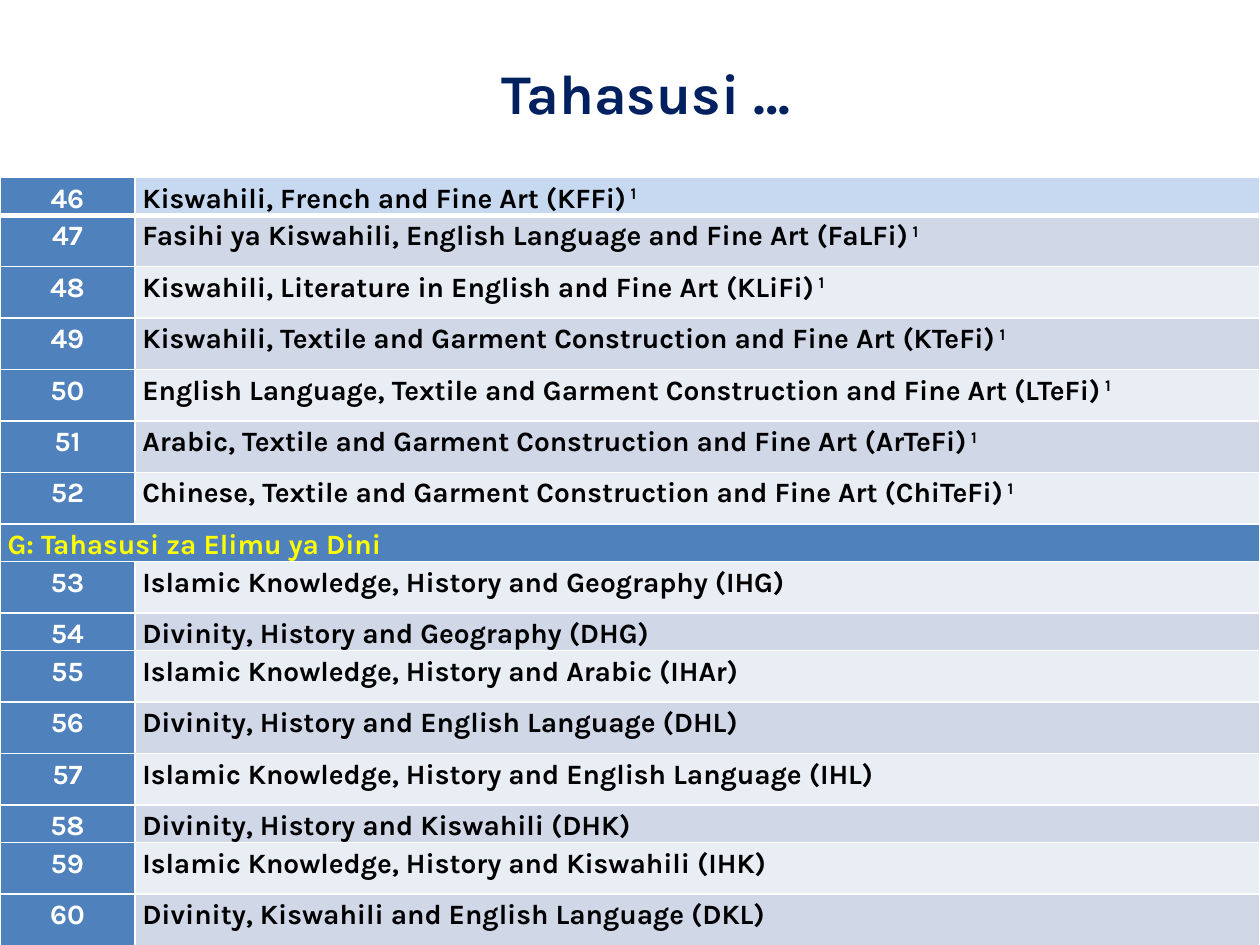
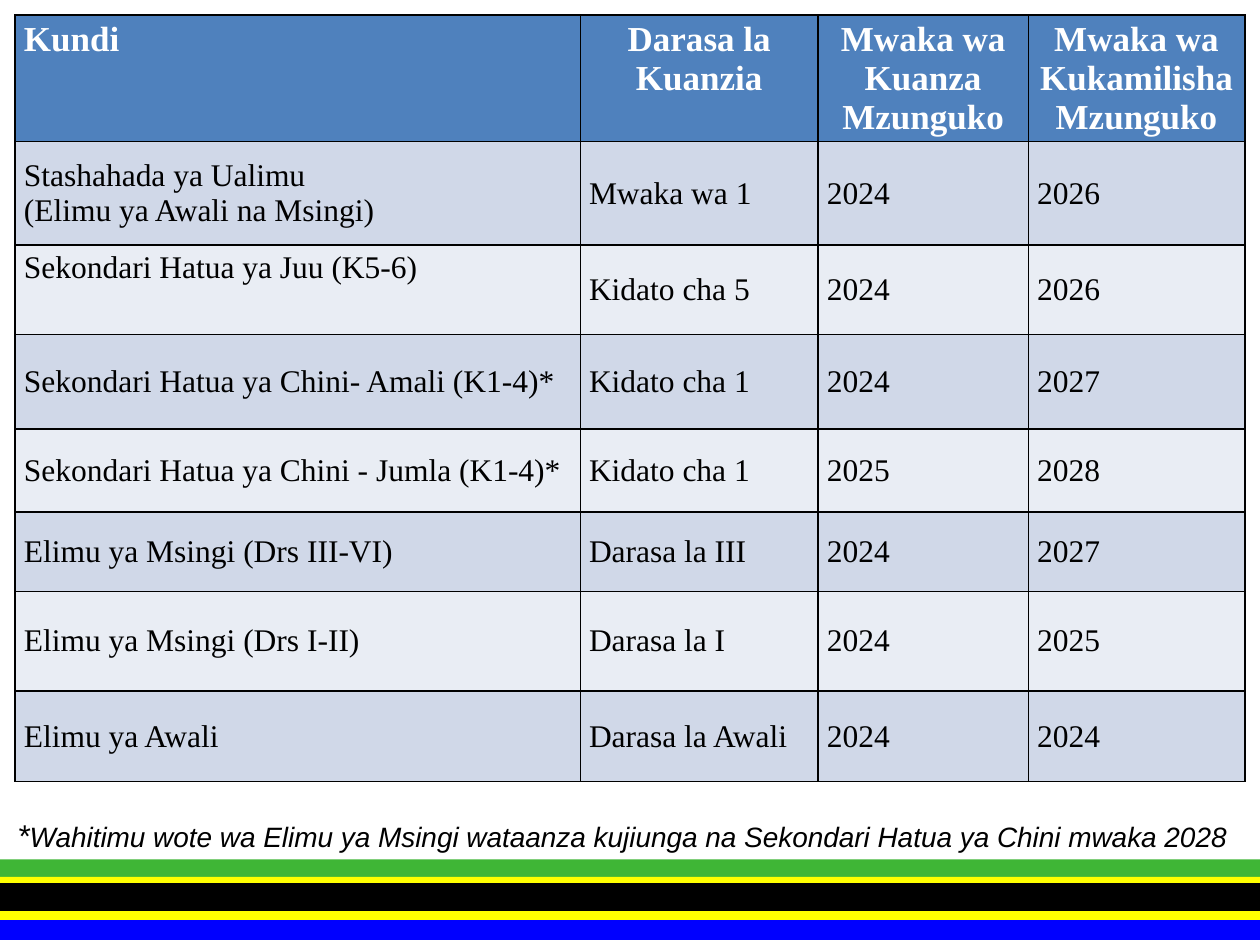
from lxml import etree
from pptx import Presentation
from pptx.dml.color import RGBColor
from pptx.enum.shapes import MSO_SHAPE
from pptx.enum.text import MSO_ANCHOR, PP_ALIGN
from pptx.oxml.ns import qn
from pptx.util import Inches, Pt

RECT = MSO_SHAPE.RECTANGLE
TOP, MIDDLE = MSO_ANCHOR.TOP, MSO_ANCHOR.MIDDLE
LEFT, CENTER, JUSTIFY = PP_ALIGN.LEFT, PP_ALIGN.CENTER, PP_ALIGN.JUSTIFY

WHITE = RGBColor(0xFF, 0xFF, 0xFF)
BLACK = RGBColor(0x00, 0x00, 0x00)
NAVY = RGBColor(0x00, 0x20, 0x60)
YELLOW = RGBColor(0xFF, 0xFF, 0x00)
GREEN = RGBColor(0x3F, 0xB6, 0x36)
FLAG_BLUE = RGBColor(0x00, 0x00, 0xFF)
HEAD_BLUE = RGBColor(0x4F, 0x81, 0xBD)
SKY = RGBColor(0xC6, 0xD9, 0xF1)
STRIPES = (RGBColor(0xE9, 0xED, 0xF4), RGBColor(0xD0, 0xD8, 0xE8))

WIDTH, HEIGHT = Inches(10), Inches(7.5)
COL, ROW = WIDTH / 100, HEIGHT / 75

TITLE = dict(name="Karla", size=Pt(32), bold=True, color=NAVY)
ENTRY = dict(name="Karla", size=Pt(16), bold=True, color=BLACK)
NUMBER = {**ENTRY, "color": WHITE}
SECTION = {**ENTRY, "color": YELLOW}
HEAD = dict(name="Times New Roman", size=Pt(20), bold=True, color=WHITE)
CELL = dict(name="Times New Roman", size=Pt(18), bold=False, color=BLACK)
STAR = dict(name="Arial", size=Pt(18), italic=True, color=BLACK)
NOTE = {**STAR, "size": Pt(16)}

ART_SUBJECTS = [
    "Kiswahili, French and Fine Art (KFFi)",
    "Fasihi ya Kiswahili, English Language and Fine Art (FaLFi)",
    "Kiswahili, Literature in English and Fine Art (KLiFi)",
    "Kiswahili, Textile and Garment Construction and Fine Art (KTeFi)",
    "English Language, Textile and Garment Construction and Fine Art (LTeFi)",
    "Arabic, Textile and Garment Construction and Fine Art (ArTeFi)",
    "Chinese, Textile and Garment Construction and Fine Art (ChiTeFi)",
]
RELIGION_HEADING = "G: Tahasusi za Elimu ya Dini"
RELIGION_SUBJECTS = [
    "Islamic Knowledge, History and Geography (IHG)",
    "Divinity, History and Geography (DHG)",
    "Islamic Knowledge, History and Arabic (IHAr)",
    "Divinity, History and English Language (DHL)",
    "Islamic Knowledge, History and English Language (IHL)",
    "Divinity, History and Kiswahili (DHK)",
    "Islamic Knowledge, History and Kiswahili (IHK)",
    "Divinity, Kiswahili and English Language (DKL)",
]
FIRST_NUMBER = 46
SHORT_ROWS = {0, 7, 9, 13}

SCHEDULE = [
    ("Kundi", "Darasa la Kuanzia", "Mwaka wa Kuanza Mzunguko",
     "Mwaka wa Kukamilisha Mzunguko"),
    ("Stashahada ya Ualimu\n(Elimu ya Awali na Msingi)", "Mwaka wa 1", "2024", "2026"),
    ("Sekondari Hatua ya Juu (K5-6)", "Kidato cha 5", "2024", "2026"),
    ("Sekondari Hatua ya Chini- Amali (K1-4)*", "Kidato cha 1", "2024", "2027"),
    ("Sekondari Hatua ya Chini - Jumla (K1-4)*", "Kidato cha 1", "2025", "2028"),
    ("Elimu ya Msingi (Drs III-VI)", "Darasa la III", "2024", "2027"),
    ("Elimu ya Msingi (Drs I-II)", "Darasa la I", "2024", "2025"),
    ("Elimu ya Awali", "Darasa la Awali", "2024", "2024"),
]
SCHEDULE_COLS = (44.9, 18.9, 16.7, 17.2)
SCHEDULE_ROWS = (10, 8.2, 7.1, 7.5, 6.6, 6.3, 7.9, 7.2)

BANDS = [(4.1, 2.3, FLAG_BLUE), (0, 2.2, GREEN), (1.4, 1.1, YELLOW),
         (3.7, 1.1, YELLOW), (1.9, 2.2, BLACK)]
FIRST_BAND_ID = 101


def grid(left, top, width, height):
    return [round(v) for v in (left * COL, top * ROW, width * COL, height * ROW)]


def add_run(p, text, style):
    r = p.add_run()
    r.text = text
    for key, value in style.items():
        if key == "color":
            r.font.color.rgb = value
        else:
            setattr(r.font, key, value)
    return r


def add_superscript(p, text, style):
    r = add_run(p, text, style)
    r.font._element.set("baseline", "30000")


def add_borders(cell, color, bottom=1):
    tc_pr = cell._tc.get_or_add_tcPr()
    for side, points in (("L", 1), ("R", 1), ("T", 1), ("B", bottom)):
        ln = etree.SubElement(tc_pr, qn(f"a:ln{side}"), w=str(Pt(points)))
        fill = etree.SubElement(ln, qn("a:solidFill"))
        etree.SubElement(fill, qn("a:srgbClr"), val=str(color))


def format_cell(cell, text, style, fill, align=LEFT, anchor=TOP, spacing=None,
                inset=(0.07, 0.04)):
    cell.fill.solid()
    cell.fill.fore_color.rgb = fill
    cell.margin_left = cell.margin_right = Inches(inset[0])
    cell.margin_top = cell.margin_bottom = Inches(inset[1])
    cell.vertical_anchor = anchor
    tf = cell.text_frame
    for i, line in enumerate(text.split("\n")):
        p = tf.add_paragraph() if i else tf.paragraphs[0]
        p.alignment = align
        if spacing:
            p.line_spacing = spacing
        add_run(p, line, style)
    return p


def add_grid_table(slide, box, cols, rows):
    left, top, width, height = box
    table = slide.shapes.add_table(len(rows), len(cols), *grid(*box)).table
    for column, share in zip(table.columns, cols):
        column.width = round(width * COL * share / sum(cols))
    for row, share in zip(table.rows, rows):
        row.height = round(height * ROW * share / sum(rows))
    return table


def place_title(slide, box, text):
    sp = slide.shapes.title
    sp.left, sp.top, sp.width, sp.height = grid(*box)
    tf = sp.text_frame
    tf.vertical_anchor = MIDDLE
    p = tf.paragraphs[0]
    p.alignment = CENTER
    add_run(p, text, TITLE)


def add_subject_table(slide, box):
    names = ART_SUBJECTS + [RELIGION_HEADING] + RELIGION_SUBJECTS
    rows = [3 if i in SHORT_ROWS else 4.1 for i in range(len(names))]
    table = add_grid_table(slide, box, (10.7, 89.3), rows)
    layout = dict(spacing=1.15, inset=(0.06, 0))
    number = FIRST_NUMBER
    for i, name in enumerate(names):
        first, second = table.rows[i].cells
        for cell in (first, second):
            add_borders(cell, WHITE, bottom=1 if i else 3)
        if name == RELIGION_HEADING:
            first.merge(second)
            format_cell(first, name, SECTION, HEAD_BLUE, JUSTIFY, **layout)
            continue
        format_cell(first, str(number), NUMBER, HEAD_BLUE, CENTER, **layout)
        number += 1
        p = format_cell(second, name, ENTRY, STRIPES[i % 2] if i else SKY,
                        JUSTIFY, **layout)
        if name in ART_SUBJECTS:
            add_superscript(p, " 1", ENTRY)


def add_schedule_table(slide, box):
    table = add_grid_table(slide, box, SCHEDULE_COLS, SCHEDULE_ROWS)
    for i, texts in enumerate(SCHEDULE):
        for j, text in enumerate(texts):
            cell = table.cell(i, j)
            add_borders(cell, BLACK)
            if i == 0:
                format_cell(cell, text, HEAD, HEAD_BLUE, CENTER if j else LEFT)
            else:
                anchor = TOP if (i, j) == (2, 0) else MIDDLE
                format_cell(cell, text, CELL, STRIPES[i % 2], anchor=anchor)


def move_bands_to_master(prs, slide, box):
    left, top, width, height = box
    tree = prs.slide_master.shapes._spTree
    for i, (offset, depth, color) in enumerate(BANDS):
        sp = slide.shapes.add_shape(RECT, *grid(left, top + offset, width, depth))
        sp.shadow.inherit = False
        sp.fill.solid()
        sp.fill.fore_color.rgb = color
        sp.line.fill.background()
        sp._element.nvSpPr.cNvPr.set("id", str(FIRST_BAND_ID + i))
        tree.append(sp._element)


def add_footnote(slide, box):
    tf = slide.shapes.add_textbox(*grid(*box)).text_frame
    tf.word_wrap = True
    p = tf.paragraphs[0]
    add_run(p, "*", STAR)
    add_run(p, "Wahitimu wote wa Elimu ya Msingi wataanza kujiunga na "
               "Sekondari Hatua ya Chini mwaka 2028", NOTE)


def build_subjects_slide(prs):
    slide = prs.slides.add_slide(prs.slide_layouts[5])
    place_title(slide, (14.7, 2.3, 73.2, 10.1), "Tahasusi …")
    add_subject_table(slide, (0, 14.1, 100, 61))


def build_schedule_slide(prs):
    slide = prs.slides.add_slide(prs.slide_layouts[6])
    move_bands_to_master(prs, slide, (0, 68.2, 100, 6.4))
    add_schedule_table(slide, (1.2, 1.2, 97.6, 60.8))
    add_footnote(slide, (0.4, 64.3, 99.2, 4))


def main():
    prs = Presentation()
    prs.slide_width, prs.slide_height = WIDTH, HEIGHT
    build_subjects_slide(prs)
    build_schedule_slide(prs)
    prs.save("out.pptx")


if __name__ == "__main__":
    main()
